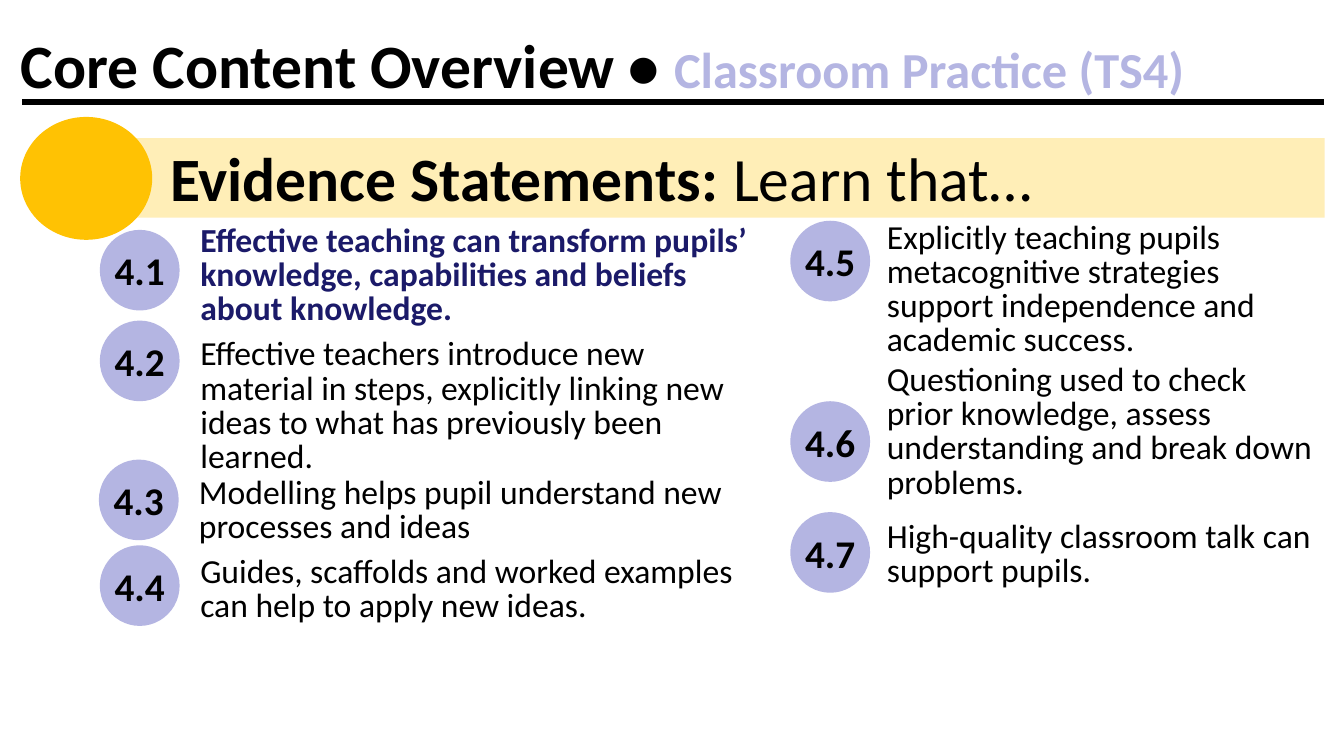
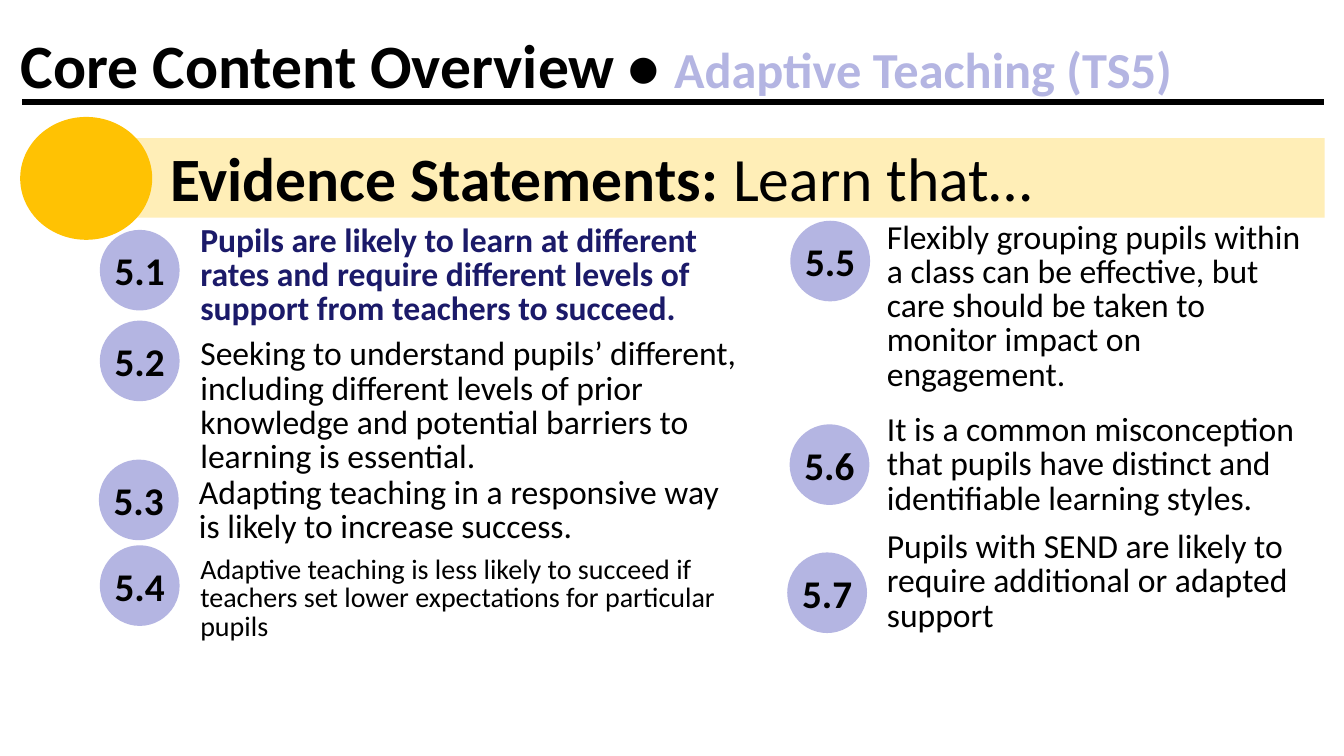
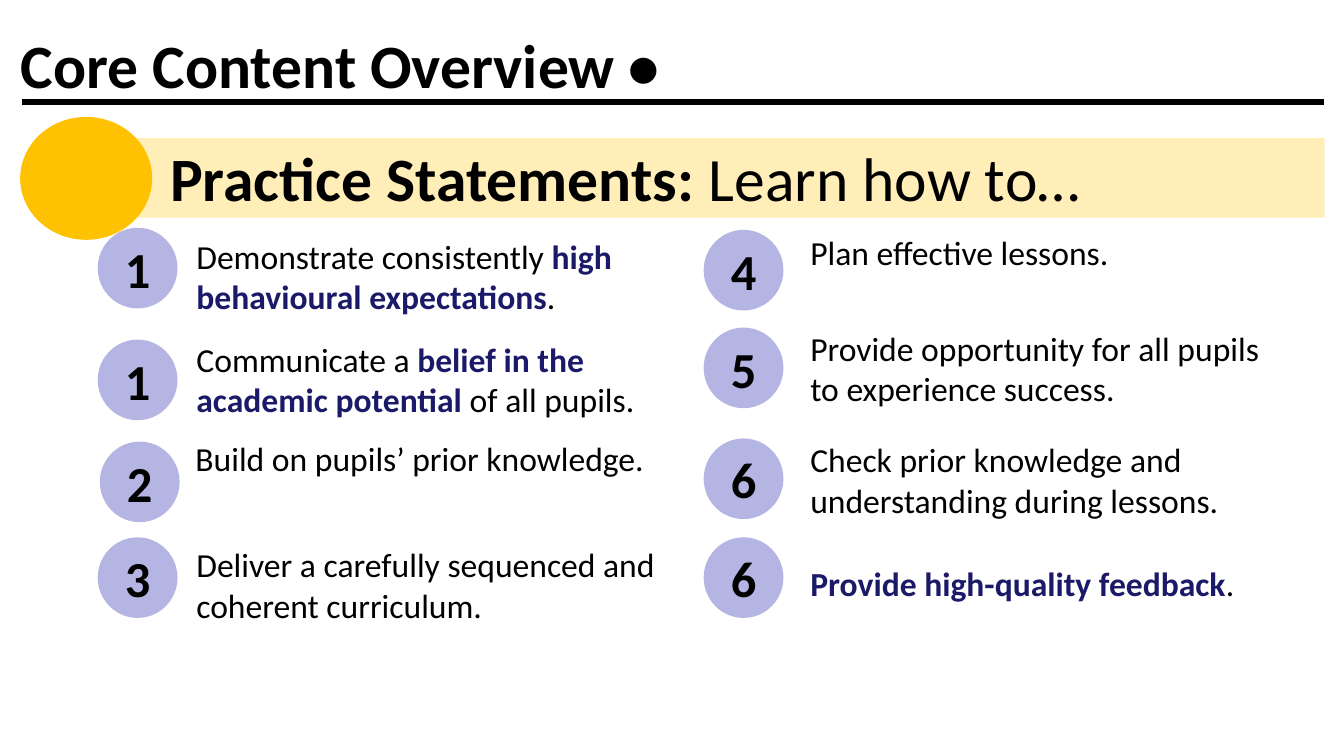
"""Build three core content overview slides with numbered statements."""
from pptx import Presentation
from pptx.dml.color import RGBColor
from pptx.enum.shapes import MSO_CONNECTOR, MSO_SHAPE
from pptx.enum.text import MSO_ANCHOR, MSO_AUTO_SIZE, PP_ALIGN
from pptx.oxml.ns import qn
from pptx.util import Pt
from lxml import etree

RECTANGLE, ELLIPSE = MSO_SHAPE.RECTANGLE, MSO_SHAPE.OVAL
STRAIGHT = MSO_CONNECTOR.STRAIGHT
MIDDLE, CENTER = MSO_ANCHOR.MIDDLE, PP_ALIGN.CENTER
GROW = MSO_AUTO_SIZE.SHAPE_TO_FIT_TEXT

BLACK = RGBColor(0x00, 0x00, 0x00)
NAVY = RGBColor(0x1B, 0x1A, 0x69)
LILAC = RGBColor(0xB4, 0xB5, 0xE2)
GOLD = RGBColor(0xFF, 0xC2, 0x03)
CREAM = RGBColor(0xFF, 0xEE, 0xB7)

FONT = "Calibri"
BADGE_WIDTH, BADGE_HEIGHT = 57, 57.6
TITLE = {"size": Pt(44), "bold": True, "color": BLACK}
TOPIC = {"size": Pt(36), "bold": True, "color": LILAC}
LEAD = {"size": Pt(44), "bold": False, "color": BLACK}
PLAIN = {"size": Pt(24), "bold": False, "color": BLACK}
SMALL = {"size": Pt(20), "bold": False, "color": BLACK}
STRONG = {"size": Pt(24), "bold": True, "color": NAVY}
CODE = {"size": Pt(28), "bold": True, "color": BLACK}
DIGIT = {"size": Pt(36), "bold": True, "color": BLACK}


def write(frame, runs, spacing=1.0):
    """Fill the first paragraph of a frame with styled runs."""
    frame.word_wrap = True
    paragraph = frame.paragraphs[0]
    paragraph.line_spacing = spacing
    for words, style in runs:
        run = paragraph.add_run()
        run.text = words
        run.font.name = FONT
        for attribute, value in style.items():
            if attribute == "color":
                run.font.color.rgb = value
            else:
                setattr(run.font, attribute, value)
    return paragraph


def add_block(slide, kind, left, top, width, height, color):
    """Add a flat filled shape without line or shadow."""
    block = slide.shapes.add_shape(kind, Pt(left), Pt(top), Pt(width), Pt(height))
    block.shadow.inherit = False
    block.fill.solid()
    block.fill.fore_color.rgb = color
    block.line.fill.background()
    return block


EVIDENCE = [("Evidence Statements: ", TITLE), ("Learn that…", LEAD)]
PRACTICE = [("Practice Statements: ", TITLE), ("Learn how to…", LEAD)]

# Each statement: label, badge left and top, text left, top and width, line count, runs.
SLIDES = [
    {
        "title": [("Core Content Overview • ", TITLE), ("Classroom Practice (TS4)", TOPIC)],
        "banner": EVIDENCE, "label": CODE, "spacing": 0.85,
        "statements": [
            ("4.1", 71.3, 164.2, 136, 157, 414, 3, [
                ("Effective teaching can transform pupils’ knowledge, capabilities and beliefs "
                 "about knowledge.", STRONG)]),
            ("4.2", 71.3, 229, 136, 238.3, 414, 4, [
                ("Effective teachers introduce new material in steps, explicitly linking new "
                 "ideas to what has previously been learned.", PLAIN)]),
            ("4.3", 70.6, 328.3, 135, 337, 394, 2, [
                ("Modelling helps pupil understand new processes and ideas", PLAIN)]),
            ("4.4", 71.3, 389.5, 136, 393.8, 426, 2, [
                ("Guides, scaffolds and worked examples can help to apply new ideas.", PLAIN)]),
            ("4.5", 564.5, 157.7, 626.4, 154.8, 320.4, 4, [
                ("Explicitly teaching pupils metacognitive strategies support independence and "
                 "academic success.", PLAIN)]),
            ("4.6", 564.5, 286.6, 626.4, 256.3, 320.4, 4, [
                ("Questioning used to check prior knowledge, assess understanding and break "
                 "down problems.", PLAIN)]),
            ("4.7", 564.5, 365.8, 626.4, 368.6, 320.4, 2, [
                ("High-quality classroom talk can support pupils.", PLAIN)]),
        ],
    },
    {
        "title": [("Core Content Overview • ", TITLE), ("Adaptive Teaching (TS5)", TOPIC)],
        "banner": EVIDENCE, "label": CODE, "spacing": 0.85,
        "statements": [
            ("5.1", 71.3, 164.2, 136, 157, 414, 3, [
                ("Pupils are likely to learn at different rates and require different levels of "
                 "support from teachers to succeed.", STRONG)]),
            ("5.2", 71.3, 229, 136, 238.3, 414, 4, [
                ("Seeking to understand pupils’ different, including different levels of prior "
                 "knowledge and potential barriers to learning is essential.", PLAIN)]),
            ("5.3", 70.6, 328.3, 135, 337, 394, 2, [
                ("Adapting teaching in a responsive way is likely to increase success.", PLAIN)]),
            ("5.4", 71.3, 389.5, 136, 393.8, 426, 3, [
                ("Adaptive teaching is less likely to succeed if teachers set lower expectations "
                 "for particular pupils", SMALL)]),
            ("5.5", 564.5, 157.7, 626.4, 154.8, 320.4, 5, [
                ("Flexibly grouping pupils within a class can be effective, but care should be "
                 "taken to monitor impact on engagement.", PLAIN)]),
            ("5.6", 564, 303.1, 626.4, 292.3, 320.4, 3, [
                ("It is a common misconception that pupils have distinct and identifiable "
                 "learning styles.", PLAIN)]),
            ("5.7", 562.3, 394.6, 626.4, 375.8, 320.4, 3, [
                ("Pupils with SEND are likely to require additional or adapted support", PLAIN)]),
        ],
    },
    {
        "title": [("Core Content Overview •", TITLE)],
        "banner": PRACTICE, "label": DIGIT, "spacing": 1.0,
        "statements": [
            ("1", 69.8, 162.7, 133.2, 164.9, 358, 2, [
                ("Demonstrate consistently ", PLAIN),
                ("high behavioural expectations", STRONG), (".", PLAIN)]),
            ("1", 69.8, 242.6, 133.2, 238.3, 358, 2, [
                ("Communicate a ", PLAIN),
                ("belief in the academic potential ", STRONG), ("of all pupils.", PLAIN)]),
            ("2", 71.3, 315.4, 132.5, 309.6, 358, 1, [
                ("Build on pupils’ prior knowledge.", PLAIN)]),
            ("3", 69.8, 383.8, 133.2, 385.2, 358, 2, [
                ("Deliver a carefully sequenced and coherent curriculum.", PLAIN)]),
            ("4", 502.6, 164.2, 571.7, 162, 358, 1, [("Plan effective lessons.", PLAIN)]),
            ("5", 502.6, 234, 571.7, 230.4, 358, 2, [
                ("Provide opportunity for all pupils to experience success.", PLAIN)]),
            ("6", 502.6, 313.2, 571.7, 310.3, 358, 2, [
                ("Check prior knowledge and understanding during lessons.", PLAIN)]),
            ("6", 502.6, 383.8, 571.7, 398.9, 358, 1, [
                ("Provide high-quality feedback", STRONG), (".", PLAIN)]),
        ],
    },
]

deck = Presentation()
deck.slide_width, deck.slide_height = Pt(960), Pt(540)
blank = deck.slide_layouts[6]

for content in SLIDES:
    slide = deck.slides.add_slide(blank)
    add_block(slide, RECTANGLE, 90.7, 98.6, 855.4, 56.9, CREAM)
    add_block(slide, ELLIPSE, 14.4, 83.5, 94.3, 87.8, GOLD)

    rule = slide.shapes.add_connector(STRAIGHT, Pt(15.8), Pt(72.7), Pt(946), Pt(72.7))
    rule.line.color.rgb = BLACK
    rule.line.width = Pt(4.5)
    etree.SubElement(rule._element.spPr, qn("a:effectLst"))

    passages = [
        (7.9, 15.8, 952, 1, content["title"], 1.0),
        (114.5, 96.5, 830, 1, content["banner"], 1.0),
    ]
    for label, badge_left, badge_top, left, top, width, lines, runs in content["statements"]:
        badge = add_block(slide, ELLIPSE, badge_left, badge_top, BADGE_WIDTH, BADGE_HEIGHT, LILAC)
        frame = badge.text_frame
        for side in ("left", "top", "right", "bottom"):
            setattr(frame, "margin_" + side, 0)
        frame.vertical_anchor = MIDDLE
        write(frame, [(label, content["label"])]).alignment = CENTER
        passages.append((left, top, width, lines, runs, content["spacing"]))

    for left, top, width, lines, runs, spacing in passages:
        height = round(runs[0][1]["size"].pt * 1.2 * spacing * lines + 7.2, 2)
        passage = slide.shapes.add_textbox(Pt(left), Pt(top), Pt(width), Pt(height))
        passage.text_frame.auto_size = GROW
        write(passage.text_frame, runs, spacing)

deck.save("out.pptx")
